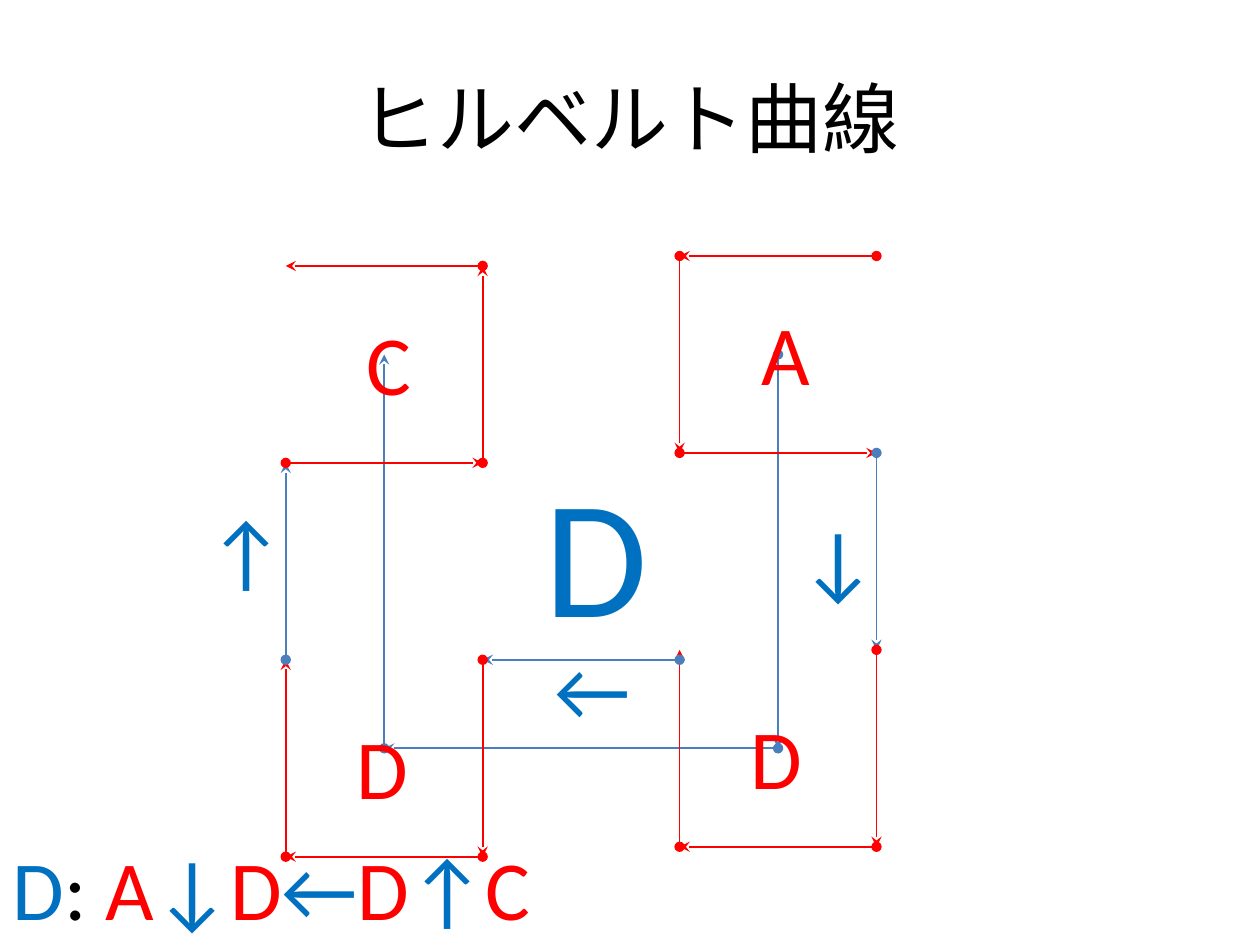
from itertools import pairwise

from lxml.etree import SubElement
from pptx import Presentation
from pptx.dml.color import RGBColor
from pptx.enum.shapes import MSO_CONNECTOR
from pptx.enum.text import MSO_ANCHOR, MSO_AUTO_SIZE, PP_ALIGN
from pptx.oxml.ns import qn
from pptx.util import Cm, Pt

BLACK, RED, BLUE, LINE_BLUE = "000000", "FF0000", "0070C0", "4B7EBC"
CELL = 3.97
LETTER_HEIGHT = 2.31
CORNERS = {
    "A": [(1, 0), (0, 0), (0, 1), (1, 1)],
    "C": [(0, 1), (1, 1), (1, 0), (0, 0)],
    "D": [(1, 0), (1, 1), (0, 1), (0, 0)],
}
LETTER_BOX = {"A": (1.4, 0.8, 1.5), "C": (1.37, 0.8, 1.42), "D": (1.18, 1, 1.57)}


def color(hex_string):
    return RGBColor.from_string(hex_string)


def add_text(slide, runs, left, top, width, height, size=48, wrap=False,
             align=PP_ALIGN.LEFT, anchor=MSO_ANCHOR.TOP):
    shape = slide.shapes.add_textbox(Cm(left), Cm(top), Cm(width), Cm(height))
    frame = shape.text_frame
    frame.word_wrap = wrap
    frame.auto_size = MSO_AUTO_SIZE.NONE if wrap else MSO_AUTO_SIZE.SHAPE_TO_FIT_TEXT
    frame.vertical_anchor = anchor
    paragraph = frame.paragraphs[0]
    paragraph.alignment = align
    for text, hex_string in runs:
        run = paragraph.add_run()
        run.text = text
        run.font.name = "Calibri"
        run.font.size = Pt(size)
        run.font.color.rgb = color(hex_string)


def add_path(slide, points, hex_string):
    for start, end in pairwise(points):
        connector = slide.shapes.add_connector(
            MSO_CONNECTOR.STRAIGHT, *(Cm(value) for value in (*start, *end)))
        connector.line.color.rgb = color(hex_string)
        connector.line.width = Pt(1)
        line = connector.line._get_or_add_ln()
        SubElement(line, qn("a:headEnd"), type="oval")
        SubElement(line, qn("a:tailEnd"), type="stealth")
        SubElement(connector._element.spPr, qn("a:effectLst"))


def add_curve(slide, kind, left, top, size, hex_string):
    points = [(left + x * size, top + y * size) for x, y in CORNERS[kind]]
    add_path(slide, points, hex_string)


def add_cell(slide, kind, left, top):
    add_curve(slide, kind, left, top, CELL, RED)
    x, y, width = LETTER_BOX[kind]
    add_text(slide, [(kind, RED)], left + x, top + y, width, LETTER_HEIGHT)


def add_link(slide, arrow, start, end, arrow_left, arrow_top):
    add_path(slide, [start, end], LINE_BLUE)
    add_text(slide, [(arrow, BLUE)], arrow_left, arrow_top, 2.06, LETTER_HEIGHT)


def add_diagram(slide, left, top):
    right = left + 2 * CELL
    outer = right + CELL
    lower = top + 2 * CELL
    drop = 0.2
    add_curve(slide, "D", left + CELL / 2, top + CELL / 2, 2 * CELL, LINE_BLUE)
    add_text(slide, [("D", BLUE)], left + 4.96, top + 3.78, 2.62, 4.37, size=96)
    add_cell(slide, "A", right, top)
    add_link(slide, "↓", (outer, top + CELL), (outer, lower), left + 10.12, top + 4.95)
    add_cell(slide, "D", right, lower)
    add_link(slide, "←", (right, lower + drop), (left + CELL, lower + drop),
             left + 5.16, top + 7.54)
    add_cell(slide, "D", left, lower + drop)
    add_link(slide, "↑", (left, lower + drop), (left, top + CELL + drop),
             left - 1.8, top + 4.77)
    add_cell(slide, "C", left, top + drop)


def add_rule(slide, left, top):
    runs = [("D", BLUE), (": ", BLACK)]
    runs += [(symbol, RED if symbol in CORNERS else BLUE) for symbol in "A↓D←D↑C"]
    add_text(slide, runs, left, top, 11.05, LETTER_HEIGHT)


def main():
    presentation = Presentation()
    presentation.slide_width, presentation.slide_height = Cm(25.4), Cm(19.05)
    slide = presentation.slides.add_slide(presentation.slide_layouts[6])
    add_text(slide, [("ヒルベルト曲線", BLACK)], 1.27, 0.76, 22.86, 3.18, size=44,
             wrap=True, align=PP_ALIGN.CENTER, anchor=MSO_ANCHOR.MIDDLE)
    add_diagram(slide, 5.76, 5.16)
    add_rule(slide, 0, 16.74)
    presentation.save("out.pptx")


if __name__ == "__main__":
    main()
